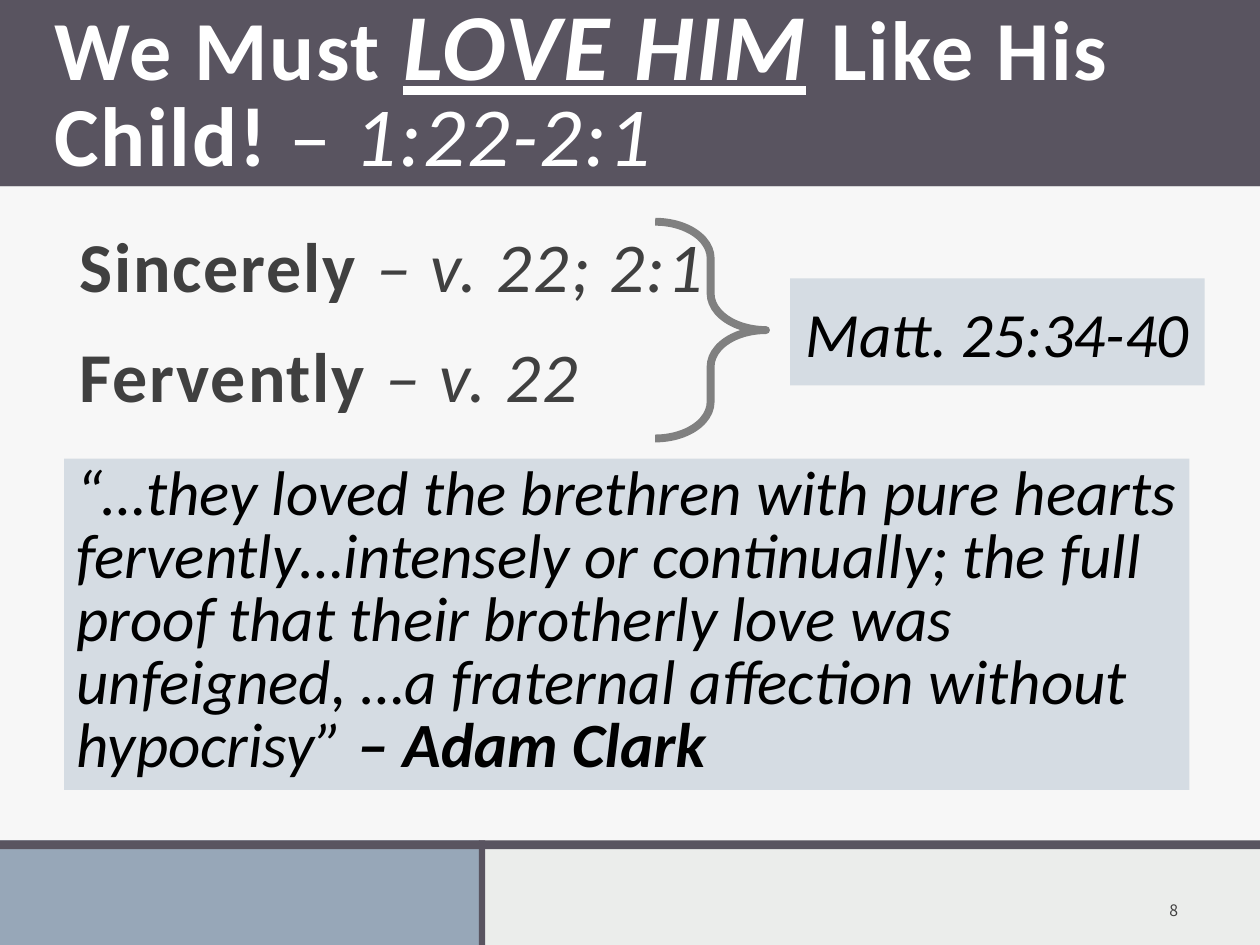
from dataclasses import dataclass

from pptx import Presentation
from pptx.dml.color import RGBColor
from pptx.enum.shapes import MSO_SHAPE as Shape
from pptx.enum.text import MSO_ANCHOR as Anchor, MSO_AUTO_SIZE as AutoSize, PP_ALIGN as Align
from pptx.oxml.ns import qn
from pptx.util import Inches, Pt
from lxml.etree import SubElement

PLUM, SLATE, MIST, PAPER = "595460", "97A7B8", "D5DCE3", "EBEDEB"
WHITE, BLACK, CHARCOAL, GREY = "FFFFFF", "000000", "404040", "808080"
INSETS = (0.1, 0.05, 0.1, 0.05)
HOLDER_INSETS = (0.12, 0.12, 0.12, 0.1)


@dataclass
class Box:
    left: float
    top: float
    width: float
    height: float

    def share(self, left, top, width, height):
        return Box(self.left + self.width * left / 100, self.top + self.height * top / 100,
                   self.width * width / 100, self.height * height / 100)

    def lengths(self):
        return [Inches(side) for side in (self.left, self.top, self.width, self.height)]


def paint(target, colour, alpha=None):
    target.solid()
    target.fore_color.rgb = RGBColor.from_string(colour)
    if alpha is not None:
        tint = target._xPr.find(qn("a:solidFill"))[0]
        SubElement(tint, qn("a:alpha")).set("val", str(alpha * 1000))


def block(page, box, colour, alpha=None):
    shape = page.shapes.add_shape(Shape.RECTANGLE, *box.lengths())
    shape.shadow.inherit = False
    shape.line.fill.background()
    paint(shape.fill, colour, alpha)
    return shape


def place(holder, box):
    holder.left, holder.top, holder.width, holder.height = box.lengths()
    holder.element.getparent().append(holder.element)
    return holder


def set_frame(shape, anchor=Anchor.TOP, insets=INSETS):
    frame = shape.text_frame
    frame.word_wrap = True
    frame.auto_size = AutoSize.NONE
    frame.vertical_anchor = anchor
    (frame.margin_left, frame.margin_top,
     frame.margin_right, frame.margin_bottom) = [Inches(inset) for inset in insets]
    return frame


def set_para(para, align=Align.LEFT, pitch=None, before=0, after=0):
    para.alignment = align
    para.space_before, para.space_after = Pt(before), Pt(after)
    if pitch:
        para.line_spacing = Pt(pitch)
    return para


def write(para, text, size, colour, bold=False, italic=False, underline=False,
          font="Calibri", spacing=0):
    span = para.add_run()
    span.text = text
    style = span.font
    style.name, style.size = font, Pt(size)
    style.bold, style.italic, style.underline = bold, italic, underline
    style.color.rgb = RGBColor.from_string(colour)
    if spacing:
        span._r.get_or_add_rPr().set("spc", str(round(spacing * 100)))


def add_heading(page, box):
    block(page, box, PLUM)
    title = place(page.shapes.title, box.share(3.1, 6.76, 93.9, 86.49))
    frame = set_frame(title, Anchor.MIDDLE, (0.12, 0.2, 0.12, 0.1))
    para = set_para(frame.paragraphs[0], pitch=48)
    for text, size, style in (
        ("We Must ", 48, {"bold": True}),
        ("LOVE HIM", 54, {"bold": True, "italic": True, "underline": True}),
        (" ", 54, {"bold": True}),
        ("Like His Child! ", 48, {"bold": True}),
        ("– ", 48, {}),
        ("1:22-2:1", 48, {"italic": True}),
    ):
        write(para, text, size, WHITE, spacing=1.1, **style)


def add_points(page, box):
    frame = set_frame(place(page.placeholders[1], box), insets=HOLDER_INSETS)
    for index, (manner, verse) in enumerate((("Sincerely ", "– v. 22; 2:1"),
                                             ("Fervently ", "– v. 22"))):
        para = frame.add_paragraph() if index else frame.paragraphs[0]
        set_para(para, pitch=40, before=18 * index, after=4.5)
        layout = para._p.get_or_add_pPr()
        layout.set("marL", "0")
        layout.set("indent", "0")
        SubElement(layout, qn("a:buNone"))
        write(para, manner, 40, CHARCOAL, bold=True, spacing=1.1)
        write(para, verse, 40, CHARCOAL, italic=True, spacing=1.1)


def add_brace(page, box):
    brace = page.shapes.add_shape(Shape.RIGHT_BRACE, *box.lengths())
    brace.shadow.inherit = False
    brace.fill.background()
    brace.adjustments[0], brace.adjustments[1] = 0.33, 0.5
    paint(brace.line.fill, GREY)
    brace.line.width = Pt(4.5)


def add_reference(page, box):
    frame = set_frame(block(page, box, MIST), Anchor.MIDDLE)
    para = set_para(frame.paragraphs[0], Align.CENTER)
    write(para, "Matt. 25:34-40", 36, BLACK, italic=True)


def add_quote(page, box):
    frame = set_frame(block(page, box, MIST))
    para = set_para(frame.paragraphs[0], pitch=36)
    write(para, "“…they loved the brethren with pure hearts fervently…intensely or "
                "continually; the full proof that their brotherly love was unfeigned, "
                "…a fraternal affection without hypocrisy” ", 36, BLACK, italic=True)
    write(para, "– Adam Clark", 36, BLACK, bold=True, italic=True)


def add_content(page, box):
    block(page, box, WHITE, alpha=60)
    add_points(page, box.share(5.1, 5.4, 93.9, 87.67))
    add_reference(page, box.share(62.7, 14.07, 32.9, 16.38))
    add_brace(page, box.share(52, 5.4, 8.8, 33.14))
    add_quote(page, box.share(5.1, 41.62, 89.3, 50.67))


def add_footer(page, box):
    block(page, box.share(0, 0, 38.1, 100), SLATE)
    block(page, box.share(0, 0, 100, 8.43), PLUM)
    block(page, box.share(38, 0, 0.5, 100), PLUM)
    number = page.shapes.add_textbox(*box.share(86.7, 27.71, 8, 60.24).lengths())
    frame = set_frame(number, Anchor.BOTTOM, HOLDER_INSETS)
    para = set_para(frame.paragraphs[0], Align.RIGHT)
    write(para, "8", 9, CHARCOAL, font="Noto Sans CJK JP", spacing=1.1)


def main():
    deck = Presentation()
    deck.slide_width, deck.slide_height = Inches(10), Inches(7.5)
    page = deck.slides.add_slide(deck.slide_layouts[1])
    paint(page.background.fill, PAPER)
    whole = Box(0, 0, 10, 7.5)
    add_heading(page, whole.share(0, 0, 100, 19.73))
    add_content(page, whole.share(0, 19.73, 100, 69.2))
    add_footer(page, whole.share(0, 88.93, 100, 11.07))
    deck.save("out.pptx")


if __name__ == "__main__":
    main()
